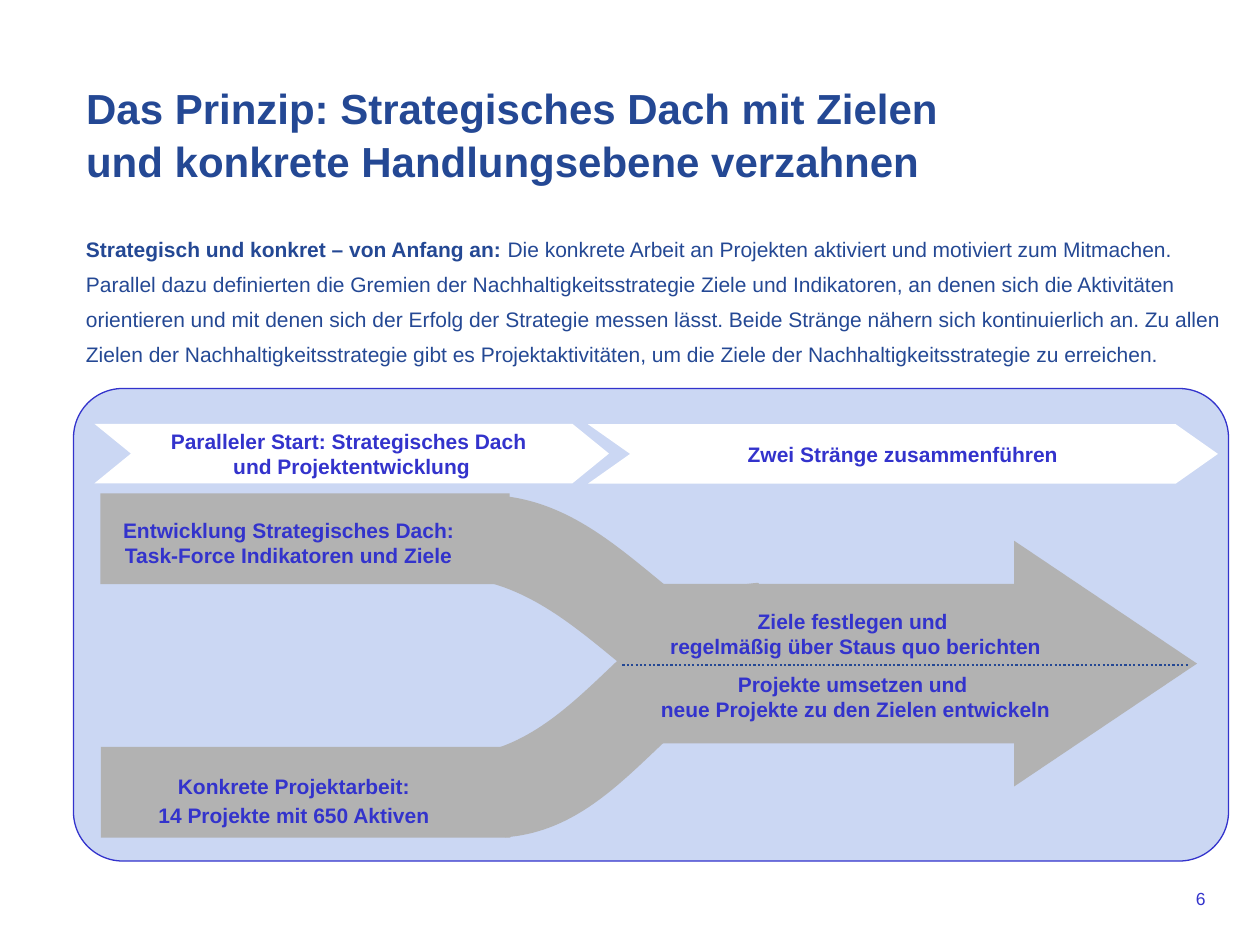
from copy import deepcopy

from lxml import etree
from pptx import Presentation
from pptx.dml.color import RGBColor
from pptx.enum.dml import MSO_LINE
from pptx.enum.shapes import MSO_CONNECTOR, MSO_SHAPE as Kind
from pptx.enum.text import MSO_ANCHOR as Anchor, MSO_AUTO_SIZE, PP_ALIGN as Align
from pptx.oxml.ns import qn
from pptx.util import Pt

NAVY, BLUE, PALE, GREY, WHITE = "244894", "3333CC", "CBD7F3", "B2B2B2", "FFFFFF"
LABEL = {"name": "Arial", "size": Pt(12), "bold": True}


def rgb(value):
    return RGBColor.from_string(value)


def write(box, paragraphs, formats, color, align, anchor=Anchor.MIDDLE, wrap=False):
    """Fill a box with paragraphs, each a list of spans that may hold line breaks."""
    frame = box.text_frame
    frame.word_wrap = wrap
    frame.auto_size = MSO_AUTO_SIZE.NONE
    frame.vertical_anchor = anchor
    for index, spans in enumerate(paragraphs):
        para = frame.add_paragraph() if index else frame.paragraphs[0]
        para.alignment = align
        para.space_before = Pt(2.4 if index else 0)
        for text, bold in spans:
            for number, line in enumerate(text.split("\n")):
                if number:
                    para.add_line_break()
                span = para.add_run()
                span.text = line
                for key, value in {**formats, "bold": bold}.items():
                    setattr(span.font, key, value)
                span.font.color.rgb = rgb(color)
        # Line breaks take the text size, so that they do not stretch the line
        for line_break in para._p.findall(qn("a:br")):
            line_break.insert(0, deepcopy(para.runs[0]._r.rPr))


deck = Presentation()
deck.slide_width, deck.slide_height = Pt(720), Pt(540)
page = deck.slides.add_slide(deck.slide_layouts[5])
shapes = page.shapes

# Title and introduction
title = shapes.title
title.left, title.top, title.width, title.height = Pt(42), Pt(42), Pt(612), Pt(90)
heading = "Das Prinzip: Strategisches Dach mit Zielen \nund konkrete Handlungsebene verzahnen"
write(title, [[(heading, True)]], {**LABEL, "size": Pt(24)}, NAVY, Align.LEFT, Anchor.TOP, True)
title.text_frame.paragraphs[0].line_spacing = 1.05

intro = shapes.add_textbox(Pt(42), Pt(126), Pt(666), Pt(90))
intro_spans = [
    ("Strategisch und konkret – von Anfang an:", True),
    (" Die konkrete Arbeit an Projekten aktiviert und motiviert zum Mitmachen. "
     "Parallel dazu definierten die Gremien der Nachhaltigkeitsstrategie Ziele und "
     "Indikatoren, an denen sich die Aktivitäten orientieren und mit denen sich der "
     "Erfolg der Strategie messen lässt. Beide Stränge nähern sich kontinuierlich an. "
     "Zu allen Zielen der Nachhaltigkeitsstrategie gibt es Projektaktivitäten, um die "
     "Ziele der Nachhaltigkeitsstrategie zu erreichen.", False),
]
write(intro, [intro_spans], LABEL, NAVY, Align.LEFT, Anchor.TOP, True)
intro.text_frame.paragraphs[0].line_spacing = Pt(20)

# Panel, phase chevrons and the two strands that merge into the arrow:
# kind, left, top, width, height, adjustments, fill, rotation, mirrored, text
parts = [
    (Kind.ROUNDED_RECTANGLE, 42, 222, 660, 270, [0.104], PALE, 0, False, ""),
    (Kind.CHEVRON, 54, 242.2, 294, 34, [0.614], WHITE, 0, False,
     "Paralleler Start: Strategisches Dach \nund Projektentwicklung"),
    (Kind.CHEVRON, 336, 242.4, 360, 34, [0.71], WHITE, 0, False,
     "Zwei Stränge zusammenführen"),
    (Kind.WAVE, 259.2, 318.2, 208, 70.6, [0.13, 0], GREY, 27, False, ""),
    (Kind.RECTANGLE, 57.3, 282, 234, 51.8, [], GREY, 0, False, ""),
    (Kind.WAVE, 262, 369.4, 198, 72.7, [0.131, 0], GREY, 330, True, ""),
    (Kind.RIGHT_ARROW, 372, 309, 312, 140.4, [0.649, 0.744], GREY, 0, False, ""),
    (Kind.RECTANGLE, 57.7, 426.8, 234, 51.8, [], GREY, 0, False, ""),
]
for kind, left, top, width, height, adjustments, fill, rotation, mirrored, text in parts:
    part = shapes.add_shape(kind, Pt(left), Pt(top), Pt(width), Pt(height))
    part.shadow.inherit = False
    for index, value in enumerate(adjustments):
        part.adjustments[index] = value
    part.fill.solid()
    part.fill.fore_color.rgb = rgb(fill)
    if kind == Kind.ROUNDED_RECTANGLE:
        part.line.color.rgb = rgb(BLUE)
        part.line.width = Pt(0.75)
    else:
        part.line.fill.background()
    part.rotation = rotation
    if mirrored:
        part._element.spPr.xfrm.set("flipH", "1")
    if text:
        write(part, [[(text, True)]], LABEL, BLUE, Align.CENTER)

# Line between the two halves of the arrow
divider = shapes.add_connector(MSO_CONNECTOR.STRAIGHT, Pt(355.7), Pt(380.2), Pt(679.7), Pt(380.2))
divider.line.color.rgb = rgb(NAVY)
divider.line.width = Pt(1.25)
divider.line.dash_style = MSO_LINE.ROUND_DOT
etree.SubElement(divider._element.spPr, qn("a:effectLst"))

# Strand labels: left, top, width, height, paragraphs
labels = [
    (60, 288, 210, 44, ["Entwicklung Strategisches Dach:\nTask-Force Indikatoren und Ziele"]),
    (60, 435.6, 216, 44, ["Konkrete Projektarbeit:", "14 Projekte mit 650 Aktiven"]),
    (366, 350, 246, 24.4, ["Ziele festlegen und \nregelmäßig über Staus quo berichten"]),
    (366, 386, 246, 24.4, ["Projekte umsetzen und \nneue Projekte zu den Zielen entwickeln"]),
]
for left, top, width, height, texts in labels:
    label = shapes.add_textbox(Pt(left), Pt(top), Pt(width), Pt(height))
    write(label, [[(text, True)] for text in texts], LABEL, BLUE, Align.CENTER)

page_number = shapes.add_textbox(Pt(516), Pt(504), Pt(180), Pt(24))
write(page_number, [[("6", False)]], {**LABEL, "size": Pt(10)}, BLUE, Align.RIGHT, Anchor.TOP, True)

deck.save("out.pptx")
